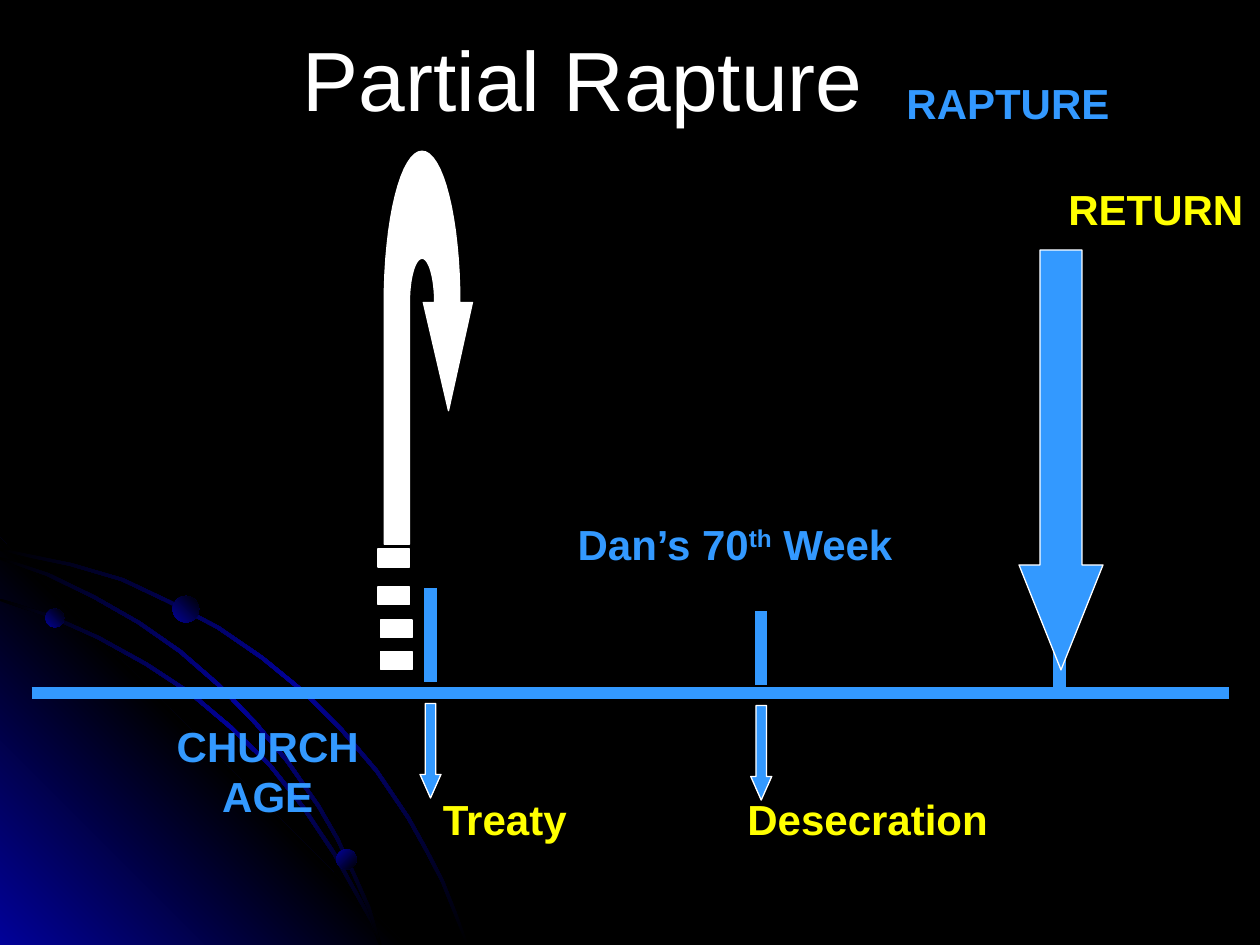
from math import cos, pi, sin

from lxml import etree
from pptx import Presentation
from pptx.dml.color import RGBColor
from pptx.enum.shapes import MSO_CONNECTOR, MSO_SHAPE
from pptx.enum.text import MSO_ANCHOR, MSO_AUTO_SIZE, PP_ALIGN
from pptx.oxml.ns import qn
from pptx.util import Inches, Pt

LEFT, CENTER, RIGHT = PP_ALIGN.LEFT, PP_ALIGN.CENTER, PP_ALIGN.RIGHT
RECT, OVAL, DOWN = MSO_SHAPE.RECTANGLE, MSO_SHAPE.OVAL, MSO_SHAPE.DOWN_ARROW
STRAIGHT = MSO_CONNECTOR.STRAIGHT
rgb = RGBColor.from_string
BLUE, YELLOW, WHITE, BLACK, NAVY = "3399FF", "FFFF00", "FFFFFF", "000000", "010199"

prs = Presentation()
prs.slide_width, prs.slide_height = Inches(10), Inches(7.5)
U = prs.slide_width / 120  # grid of 120 columns by 90 rows
s = prs.slides.add_slide(prs.slide_layouts[5])
s.background.fill.solid()
s.background.fill.fore_color.rgb = rgb(BLACK)


def paint(sp, colors, angle=0):
    """One colour gives a white-edged solid, several an even gradient."""
    sp.shadow.inherit = False
    if len(colors) == 1:
        sp.fill.solid()
        sp.fill.fore_color.rgb = rgb(colors[0])
        sp.line.color.rgb = rgb(WHITE)
        sp.line.width = Pt(0.75)
        return
    sp.line.fill.background()
    sp.fill.gradient()
    sp.fill.gradient_angle = angle
    stops = next(sp._element.iter(qn("a:gsLst")))
    for stop in list(stops):
        stops.remove(stop)
    for i, color in enumerate(colors):
        gs = etree.SubElement(stops, qn("a:gs"), pos=str(100000 * i // (len(colors) - 1)))
        etree.SubElement(gs, qn("a:srgbClr"), val=color)


def outline(points):
    """Closed outline through points in inches."""
    points = [(Inches(x), Inches(y)) for x, y in points]
    builder = s.shapes.build_freeform(*points[0])
    builder.add_line_segments(points[1:], close=True)
    return builder.convert_to_shape()


# Corner glow
paint(outline([(0, 7.5), (0, 4.27), (3.22, 7.5)]), [NAVY, BLACK, NAVY], 45)

# Orbits: each ribbon is its upper edge and the same edge shifted down and left
orbits = [
    [(0, 4.35), (0.28, 4.41), (0.57, 4.47), (0.98, 4.59), (1.36, 4.77), (1.74, 4.97),
     (2.09, 5.21), (2.42, 5.48), (2.72, 5.78), (3, 6.11), (3.25, 6.48), (3.39, 6.73),
     (3.52, 6.98), (3.62, 7.23), (3.72, 7.5)],
    [(0, 4.75), (0.41, 4.88), (0.79, 5.05), (1.17, 5.26), (1.52, 5.49), (1.84, 5.76),
     (2.15, 6.06), (2.42, 6.4), (2.66, 6.76), (2.86, 7.12), (2.96, 7.3), (3.03, 7.5)],
    [(0, 4.42), (0.39, 4.55), (0.76, 4.73), (1.11, 4.93), (1.44, 5.16), (1.75, 5.43),
     (2.04, 5.73), (2.29, 6.03), (2.54, 6.39), (2.69, 6.65), (2.82, 6.93), (2.94, 7.2),
     (3.03, 7.5)],
]
for edge in orbits:
    lower = [(max(0, x - 0.02), min(7.5, y + 0.02)) for x, y in reversed(edge)]
    paint(outline(edge + lower), [BLACK, NAVY, BLACK], 315)

# Planets
for x, y, d, angle in [(0.36, 4.83, 0.15, 45), (2.67, 6.74, 0.16, 315), (1.37, 4.73, 0.21, 45)]:
    sp = s.shapes.add_shape(OVAL, Inches(x), Inches(y), Inches(d), Inches(d))
    paint(sp, [NAVY, BLACK], angle)

# Timeline and its marks
for x1, y1, x2, y2 in [(3, 66, 117, 66), (41, 56, 41, 65), (72.5, 58.2, 72.5, 65.2),
                       (100.9, 57, 100.9, 66)]:
    line = s.shapes.add_connector(STRAIGHT, *[round(v * U) for v in (x1, y1, x2, y2)])
    line.line.color.rgb = rgb(BLUE)
    line.line.width = Pt(7)
    etree.SubElement(line._element.spPr, qn("a:effectLst"))

# Down arrows
for x, y, w, h, head in [(40, 67, 2, 9, 1.125), (71.5, 67.2, 2, 9, 1.125),
                         (97.05, 23.8, 8, 40, 1.25)]:
    sp = s.shapes.add_shape(DOWN, *[round(v * U) for v in (x, y, w, h)])
    sp.adjustments[0], sp.adjustments[1] = 0.5, head
    paint(sp, [BLUE])

# Rapture arrow: outer and inner half ellipses joined to shaft and head
STEPS = 32
turns = [pi * i / STEPS for i in range(STEPS + 1)]
outer = [(3.35 + 0.3 * cos(t), 2.4 - 1.2 * sin(t)) for t in turns]
inner = [(3.35 - 0.1 * cos(t), 2.4 - 0.35 * sin(t)) for t in turns]
shaft = [(3.05, 4.32), (3.25, 4.32)]
paint(outline([(3.56, 3.26), (3.75, 2.4)] + outer + shaft + inner + [(3.36, 2.4)]), [WHITE])

# Dashes below the rapture arrow
for x, y in [(36, 52.3), (36, 55.9), (36.25, 59.05), (36.25, 62.05)]:
    sp = s.shapes.add_shape(RECT, *[round(v * U) for v in (x, y, 3, 1.7)])
    paint(sp, [WHITE])

# Labels
labels = [
    (["RAPTURE"], 84.5, 6.8, 23, 6, CENTER, BLUE),
    (["CHURCH AGE"], 14, 68, 23, 10.8, CENTER, BLUE),
    (["Dan’s 70", "th", " Week"], 51, 48.8, 38, 6, CENTER, BLUE),
    (["Treaty"], 41, 75, 15, 6, LEFT, YELLOW),
    (["Desecration"], 70, 75, 29, 6, LEFT, YELLOW),
    (["RETURN"], 90.6, 16.9, 29, 6, RIGHT, YELLOW),
]
for parts, x, y, w, h, align, color in labels:
    tf = s.shapes.add_textbox(*[round(v * U) for v in (x, y, w, h)]).text_frame
    tf.word_wrap = True
    p = tf.paragraphs[0]
    p.alignment = align
    for part in parts:
        r = p.add_run()
        r.text = part
        r.font.name, r.font.size, r.font.bold = "Arial", Pt(24), True
        r.font.color.rgb = rgb(color)
        if part == "th":
            r.font._element.set("baseline", "30000")

# Title
title = s.shapes.title
title.left, title.top, title.width, title.height = [round(v * U) for v in (19, 2, 73, 11)]
tf = title.text_frame
tf.text = "Partial Rapture"
tf.word_wrap, tf.auto_size = True, MSO_AUTO_SIZE.NONE
tf.vertical_anchor = MSO_ANCHOR.TOP
p = tf.paragraphs[0]
p.alignment = CENTER
r = p.runs[0]
r.font.name, r.font.size = "Arial", Pt(48)
r.font.color.rgb = rgb(WHITE)

prs.save("out.pptx")
